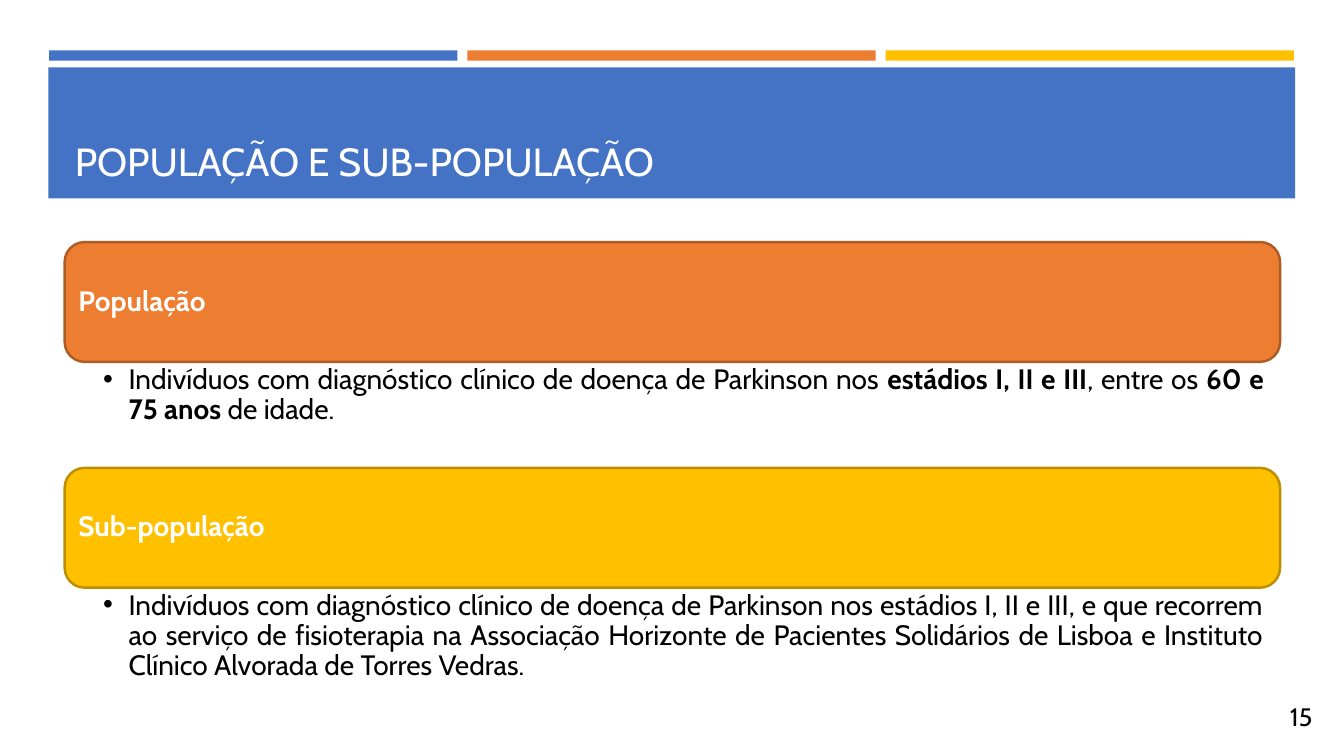
from lxml import etree
from pptx import Presentation
from pptx.dml.color import RGBColor
from pptx.enum import shapes, text
from pptx.oxml import ns
from pptx.util import Cm, Pt

BLUE = RGBColor(0x44, 0x72, 0xC4)
ORANGE = RGBColor(0xED, 0x7D, 0x31)
DARK_ORANGE = RGBColor(0xAF, 0x5C, 0x24)
GOLD = RGBColor(0xFF, 0xC0, 0x00)
DARK_GOLD = RGBColor(0xBD, 0x8E, 0x00)
WHITE = RGBColor(0xFF, 0xFF, 0xFF)
BLACK = RGBColor(0x00, 0x00, 0x00)

LEFT, WIDTH = Cm(1.63), Cm(30.63)
HEADING_HEIGHT, DETAIL_HEIGHT = Cm(3.02), Cm(2.67)

GROUPS = [
    ("População", ORANGE, DARK_ORANGE, [
        ("Indivíduos com diagnóstico clínico de doença de Parkinson nos ", False),
        ("estádios I, II e III", True),
        (", entre os ", False),
        ("60 e 75 anos ", True),
        ("de idade.", False),
    ]),
    ("Sub-população", GOLD, DARK_GOLD, [
        ("Indivíduos com diagnóstico clínico de doença de Parkinson nos estádios I, II e III, "
         "e que recorrem ao serviço de fisioterapia na Associação Horizonte de Pacientes "
         "Solidários de Lisboa e Instituto Clínico Alvorada de Torres Vedras.", False),
    ]),
]


def add_run(paragraph, wording, size, color, bold=False):
    run = paragraph.add_run()
    run.text = wording
    run.font.name = "Cabin"
    run.font.size = Pt(size)
    run.font.bold = bold
    run.font.color.rgb = color


def add_block(kind, left, top, width, height, fill):
    block = slide.shapes.add_shape(kind, left, top, width, height)
    block.shadow.inherit = False
    block.fill.solid()
    block.fill.fore_color.rgb = fill
    block.line.fill.background()
    return block


prs = Presentation()
prs.slide_width, prs.slide_height = Cm(33.87), Cm(19.05)
slide = prs.slides.add_slide(prs.slide_layouts[5])

# Header: three stripes above a band that carries the title
for column, color in enumerate((BLUE, ORANGE, GOLD)):
    add_block(shapes.MSO_SHAPE.RECTANGLE, Cm(1.24 + 10.54 * column), Cm(1.27),
              Cm(10.29), Cm(0.26), color)
add_block(shapes.MSO_SHAPE.RECTANGLE, Cm(1.22), Cm(1.7), Cm(31.42), Cm(3.3), BLUE)

title = slide.shapes.title
title.element.getparent().append(title.element)  # bring in front of the band
title.left, title.top, title.width, title.height = LEFT, Cm(1.96), WIDTH, Cm(2.82)
title.text_frame.vertical_anchor = text.MSO_ANCHOR.BOTTOM
title_line = title.text_frame.paragraphs[0]
title_line.alignment = text.PP_ALIGN.LEFT
add_run(title_line, "POPULAÇÃO E SUB-POPULAÇÃO", 28, WHITE)

# Each group: a rounded heading with its description directly below
top = Cm(6.1)
for name, fill, outline, description in GROUPS:
    heading = add_block(shapes.MSO_SHAPE.ROUNDED_RECTANGLE, LEFT, top, WIDTH,
                        HEADING_HEIGHT, fill)
    heading.line.color.rgb = outline
    heading.line.width = Pt(1.75)
    heading.text_frame.margin_left = heading.text_frame.margin_right = Cm(0.2)
    heading.text_frame.vertical_anchor = text.MSO_ANCHOR.MIDDLE
    heading_line = heading.text_frame.paragraphs[0]
    heading_line.alignment = text.PP_ALIGN.JUSTIFY
    heading_line.line_spacing = 0.9
    add_run(heading_line, name, 20, WHITE, True)
    top += HEADING_HEIGHT

    detail = slide.shapes.add_textbox(LEFT, top, WIDTH, DETAIL_HEIGHT).text_frame
    detail.word_wrap = True
    detail.margin_left, detail.margin_right = Cm(0.97), Cm(0.41)
    detail.margin_top = detail.margin_bottom = Cm(0.08)
    item = detail.paragraphs[0]
    item.alignment = text.PP_ALIGN.JUSTIFY
    item.line_spacing = 0.9
    for wording, bold in description:
        add_run(item, wording, 20, BLACK, bold)
    properties = item._p.get_or_add_pPr()
    properties.set("marL", str(Cm(0.64)))
    properties.set("indent", str(-Cm(0.64)))
    etree.SubElement(properties, ns.qn("a:buFont")).set("typeface", "Arial")
    etree.SubElement(properties, ns.qn("a:buChar")).set("char", "•")
    top += DETAIL_HEIGHT

page_number = slide.shapes.add_textbox(Cm(32.26), Cm(17.55), Cm(1.3), Cm(1.02)).text_frame
page_number.word_wrap = True
add_run(page_number.paragraphs[0], "15", 18, BLACK)

prs.save("out.pptx")
